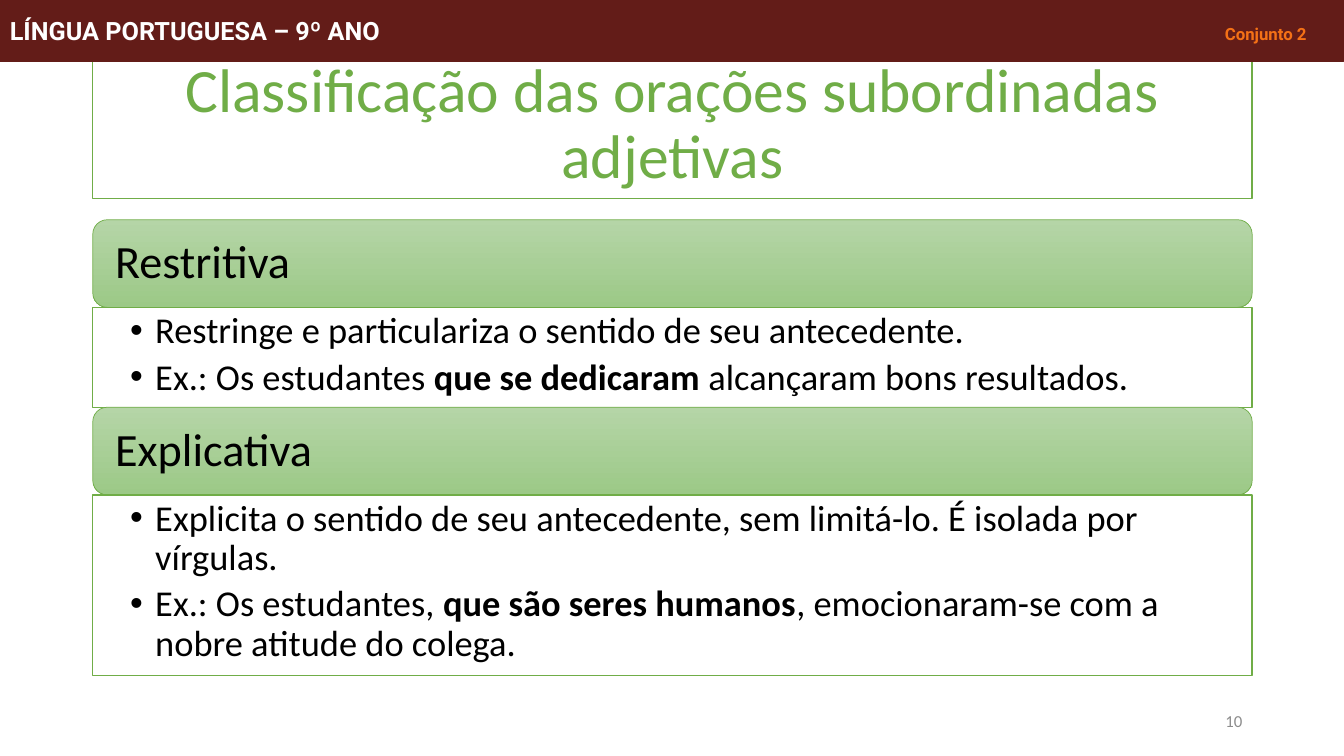
from dataclasses import dataclass

from lxml.etree import SubElement
from pptx import Presentation
from pptx.dml.color import RGBColor
from pptx.enum.shapes import MSO_SHAPE
from pptx.enum.text import MSO_ANCHOR, PP_ALIGN
from pptx.oxml.ns import qn
from pptx.util import Inches, Pt


@dataclass(frozen=True)
class Theme:
    green: str = "70AD47"
    gradient: tuple = ("B5D5A7", "9CC987")
    maroon: str = "631C18"
    orange: str = "F47116"
    gray: str = "8C8C8C"
    white: str = "FFFFFF"
    black: str = "000000"
    body_font: str = "Calibri"
    banner_font: str = "Roboto"
    title_size: int = 44
    heading_size: int = 33
    body_size: int = 26
    banner_size: int = 18
    small_size: int = 12


theme = Theme()


def add_box(kind, left, top, width, height, fill, line, weight, margins=(0.1, 0.05, 0.1, 0.05), anchor=MSO_ANCHOR.MIDDLE):
    box = page.shapes.add_shape(kind, Inches(left), Inches(top), Inches(width), Inches(height))
    box.shadow.inherit = False
    if isinstance(fill, tuple):
        box.fill.gradient()
        box.fill.gradient_angle = 270
        for stop, color in zip(box.fill.gradient_stops, fill):
            stop.color.rgb = RGBColor.from_string(color)
    elif fill:
        box.fill.solid()
        box.fill.fore_color.rgb = RGBColor.from_string(fill)
    else:
        box.fill.background()
    if line:
        box.line.color.rgb = RGBColor.from_string(line)
        box.line.width = Pt(weight)
    else:
        box.line.fill.background()
    sides = ("margin_left", "margin_top", "margin_right", "margin_bottom")
    frame_format = dict(zip(sides, map(Inches, margins)), word_wrap=True, vertical_anchor=anchor)
    for name, value in frame_format.items():
        setattr(box.text_frame, name, value)
    return box


def write(para, spans, align=PP_ALIGN.LEFT, spacing=1.0, after=0):
    para_format = {"alignment": align, "line_spacing": spacing, "space_after": Pt(after)}
    for name, value in para_format.items():
        setattr(para, name, value)
    for text, size, color, font, bold in spans:
        span = para.add_run()
        span.text = text
        for name, value in {"name": font, "size": Pt(size), "bold": bold}.items():
            setattr(span.font, name, value)
        span.font.color.rgb = RGBColor.from_string(color)


deck = Presentation()
deck.slide_width, deck.slide_height = Inches(13.33), Inches(7.5)
page = deck.slides.add_slide(deck.slide_layouts[6])

left, width = 0.92, 11.5
title = add_box(MSO_SHAPE.RECTANGLE, left, 0.52, width, 1.45, theme.white, theme.green, 1)
write(
    title.text_frame.paragraphs[0],
    [("Classificação das orações subordinadas adjetivas", theme.title_size, theme.green, theme.body_font, False)],
    PP_ALIGN.CENTER,
    0.9,
)

sections = [
    ("Restritiva", 0.99, [
        ["Restringe e particulariza o sentido de seu antecedente."],
        ["Ex.: Os estudantes ", "que se dedicaram", " alcançaram bons resultados."],
    ]),
    ("Explicativa", 1.79, [
        ["Explicita o sentido de seu antecedente, sem limitá-lo. É isolada por vírgulas."],
        ["Ex.: Os estudantes, ", "que são seres humanos", ", emocionaram-se com a nobre atitude do colega."],
    ]),
]
top, heading_height = 2.18, 0.87
for name, body_height, items in sections:
    heading = add_box(
        MSO_SHAPE.ROUNDED_RECTANGLE, left, top, width, heading_height,
        theme.gradient, theme.green, 0.5, (0.18, 0.14, 0.18, 0.14),
    )
    write(
        heading.text_frame.paragraphs[0],
        [(name, theme.heading_size, theme.black, theme.body_font, False)],
        spacing=0.9,
    )
    top += heading_height
    body = add_box(
        MSO_SHAPE.RECTANGLE, left, top, width, body_height,
        theme.white, theme.green, 1, (0.37, 0.05, 0.26, 0.05), MSO_ANCHOR.TOP,
    )
    for index, parts in enumerate(items):
        para = body.text_frame.add_paragraph() if index else body.text_frame.paragraphs[0]
        spans = [
            (text, theme.body_size, theme.black, theme.body_font, position == 1)
            for position, text in enumerate(parts)
        ]
        write(para, spans, spacing=0.9, after=5)
        properties = para._p.get_or_add_pPr()
        properties.set("marL", str(Inches(0.25)))
        properties.set("indent", str(Inches(-0.25)))
        SubElement(properties, qn("a:buFont"), typeface="Arial")
        SubElement(properties, qn("a:buChar"), char="•")
    top += body_height

number = add_box(MSO_SHAPE.RECTANGLE, 9.42, 6.95, 3, 0.4, None, None, 0)
write(
    number.text_frame.paragraphs[0],
    [("10", theme.small_size, theme.gray, theme.body_font, False)],
    PP_ALIGN.RIGHT,
)

banner = add_box(MSO_SHAPE.RECTANGLE, 0, 0, 13.33, 0.61, theme.maroon, theme.maroon, 0.75)
banner_para = banner.text_frame.paragraphs[0]
write(banner_para, [
    ("LÍNGUA PORTUGUESA – 9º ANO\t", theme.banner_size, theme.white, theme.banner_font, True),
    ("Conjunto 2", theme.small_size, theme.orange, theme.banner_font, True),
])
tabs = SubElement(banner_para._p.get_or_add_pPr(), qn("a:tabLst"))
SubElement(tabs, qn("a:tab"), pos=str(Inches(12.05)), algn="l")

deck.save("out.pptx")
